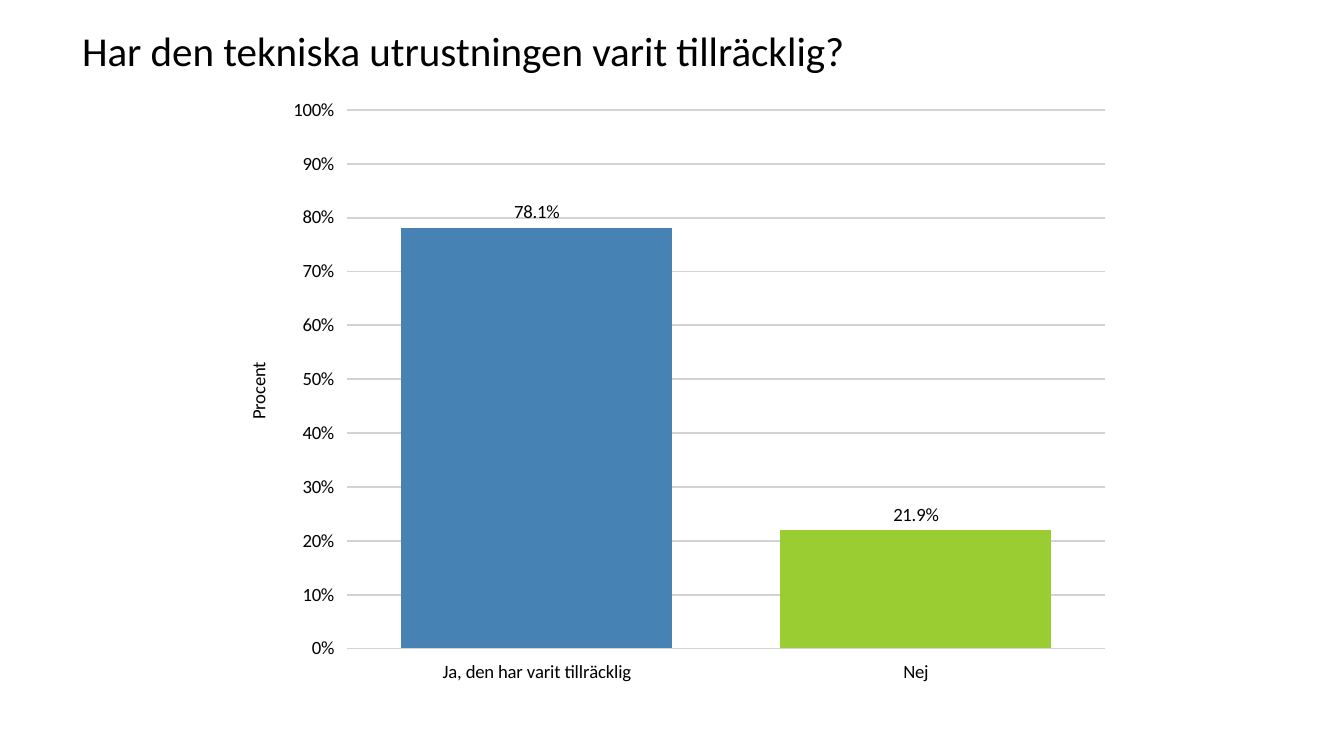
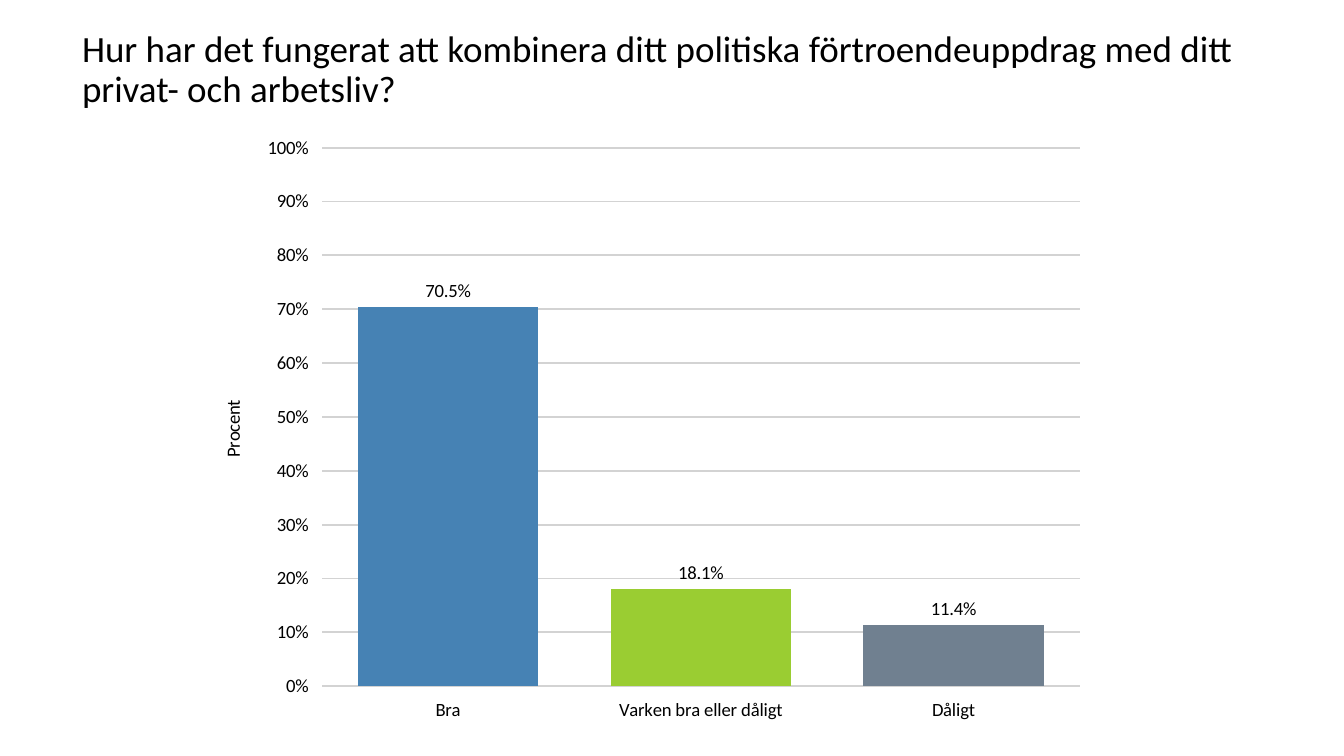
"""Build two survey slides, each with a question and a column chart."""
from pptx import Presentation
from pptx.chart.data import CategoryChartData
from pptx.dml.color import RGBColor
from pptx.enum.chart import XL_CHART_TYPE as ChartType, XL_LABEL_POSITION as LabelPos
from pptx.enum.chart import XL_TICK_MARK as TickMark
from pptx.enum.text import MSO_ANCHOR as Anchor, MSO_AUTO_SIZE as AutoSize, PP_ALIGN as Align
from pptx.oxml.ns import qn
from pptx.util import Pt

FONT = "Calibri"
BLACK = RGBColor(0x00, 0x00, 0x00)
GRID = RGBColor(0xD3, 0xD3, 0xD3)
BLUE = RGBColor(0x46, 0x82, 0xB4)
GREEN = RGBColor(0x9A, 0xCD, 0x32)
SLATE = RGBColor(0x70, 0x80, 0x90)
BAR_COLORS = (BLUE, GREEN, SLATE)


def style_font(font, size):
    """Apply the shared typeface, colour and weight."""
    font.name = FONT
    font.size = Pt(size)
    font.bold = False
    font.color.rgb = BLACK


def add_title(s, text, size):
    """Place the question in the title placeholder."""
    sp = s.shapes.title
    sp.left, sp.top, sp.width, sp.height = Pt(36.75), Pt(13), Pt(646.5), Pt(32.4)
    tf = sp.text_frame
    tf.text = text
    tf.word_wrap = True
    tf.auto_size = AutoSize.NONE
    tf.vertical_anchor = Anchor.TOP
    p = tf.paragraphs[0]
    p.alignment = Align.LEFT
    p.line_spacing = 0.9
    style_font(p.runs[0].font, size)


def style_axes(chart):
    """Format both axes, the gridlines and the value axis title."""
    for axis in (chart.category_axis, chart.value_axis):
        axis.major_tick_mark = TickMark.OUTSIDE
        axis.format.line.fill.background()
        style_font(axis.tick_labels.font, 10)
    axis = chart.value_axis
    axis.minimum_scale, axis.maximum_scale, axis.major_unit = 0, 1, 0.1
    axis.tick_labels.number_format = "0%"
    axis.tick_labels.number_format_is_linked = False
    line = axis.major_gridlines.format.line
    line.color.rgb = GRID
    line.width = Pt(1)
    title = axis.axis_title
    title.text_frame.text = "Procent"
    style_font(title.text_frame.paragraphs[0].runs[0].font, 10)
    title.element.find(".//" + qn("a:bodyPr")).set("rot", "-5400000")


def add_column_chart(s, left, top, shares):
    """Add a column chart with one colour per answer."""
    data = CategoryChartData(number_format="0.0%")
    data.categories = list(shares)
    data.add_series("Series 1", list(shares.values()))
    chart = s.shapes.add_chart(ChartType.COLUMN_CLUSTERED, Pt(left), Pt(top),
                               Pt(484.5), Pt(325.5), data).chart
    chart.has_legend = False
    chart.has_title = False
    style_font(chart.font, 18)
    style_axes(chart)
    plot = chart.plots[0]
    plot.gap_width = 40
    plot.vary_by_categories = False
    series = plot.series[0]
    series.format.fill.solid()
    series.format.fill.fore_color.rgb = BLUE
    for i, color in enumerate(BAR_COLORS[:len(shares)]):
        fill = series.points[i].format.fill
        fill.solid()
        fill.fore_color.rgb = color
    labels = series.data_labels
    labels.show_value = True
    labels.number_format = "0.0%"
    labels.number_format_is_linked = False
    labels.position = LabelPos.OUTSIDE_END
    style_font(labels.font, 10)


def add_question(prs, text, size, left, top, shares):
    """Add a slide with a question and the share of each answer."""
    s = prs.slides.add_slide(prs.slide_layouts[5])
    add_title(s, text, size)
    add_column_chart(s, left, top, shares)


def main():
    """Build and save the presentation."""
    prs = Presentation()
    prs.slide_width, prs.slide_height = Pt(720), Pt(405)
    add_question(prs, "Har den tekniska utrustningen varit tillräcklig?", 22, 117.4, 46.8,
                 {"Ja, den har varit tillräcklig": 0.781, "Nej": 0.219})
    add_question(prs, "Hur har det fungerat att kombinera ditt politiska förtroendeuppdrag "
                 "med ditt privat- och arbetsliv?", 19.8, 103.7, 67,
                 {"Bra": 0.705, "Varken bra eller dåligt": 0.181, "Dåligt": 0.114})
    prs.save("out.pptx")


if __name__ == "__main__":
    main()
